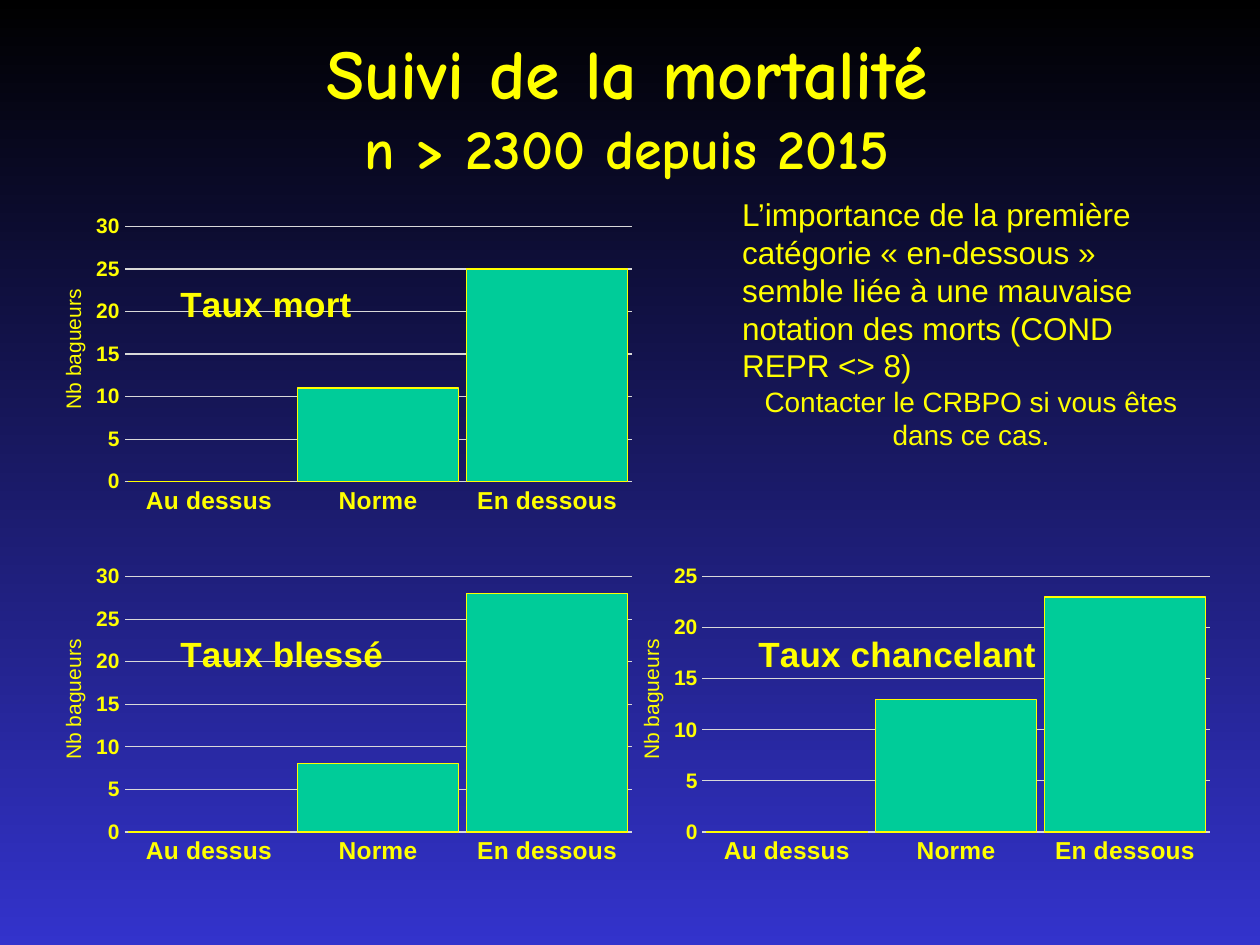
from pptx import Presentation
from pptx.chart.data import CategoryChartData
from pptx.dml.color import RGBColor
from pptx.enum import chart as charts, text
from pptx.oxml import parse_xml
from pptx.oxml.ns import nsdecls, qn
from pptx.util import Cm, Pt

YELLOW = RGBColor(0xFF, 0xFF, 0x00)
GREEN = RGBColor(0x00, 0xCC, 0x99)
GREY = RGBColor(0xD9, 0xD9, 0xD9)
BLACK = RGBColor(0x00, 0x00, 0x00)
BLUE = RGBColor(0x33, 0x33, 0xCC)

CATEGORIES = ("Au dessus", "Norme", "En dessous")
LEFT, RIGHT = 0.64, 12.29
UPPER, LOWER = 4.17, 11.23
RATES = (
    ("Taux mort", (0, 11, 25), 30, LEFT, UPPER),
    ("Taux blessé", (0, 8, 28), 30, LEFT, LOWER),
    ("Taux chancelant", (0, 13, 23), 25, RIGHT, LOWER),
)


def set_font(font, size, bold=False, name="Arial"):
    font.name = name
    font.size = Pt(size)
    font.bold = bold
    font.color.rgb = YELLOW


def paint_background(page):
    fill = page.background.fill
    fill.gradient()
    fill.gradient_angle = 270
    for stop, color, position in zip(fill.gradient_stops, (BLACK, BLUE), (0, 1)):
        stop.color.rgb = color
        stop.position = position


def add_shadow(span):
    span._r.get_or_add_rPr().find(qn("a:solidFill")).addnext(parse_xml(
        f'<a:effectLst {nsdecls("a")}><a:outerShdw dist="35921" dir="2700000">'
        '<a:srgbClr val="000000"/></a:outerShdw></a:effectLst>'))


def add_span(para, content, shadow=False, **font):
    span = para.add_run()
    span.text = content
    set_font(span.font, **font)
    if shadow:
        add_shadow(span)


def add_box(page, left, top, width, height, anchor):
    box = page.shapes.add_textbox(Cm(left), Cm(top), Cm(width), Cm(height))
    box.text_frame.word_wrap = True
    box.text_frame.vertical_anchor = anchor
    return box.text_frame


def add_heading(page):
    frame = add_box(page, 1.85, 0.53, 21.59, 3.18, text.MSO_ANCHOR.MIDDLE)
    para = frame.paragraphs[0]
    para.alignment = text.PP_ALIGN.CENTER
    style = dict(bold=True, name="Comic Neue", shadow=True)
    add_span(para, "Suivi de la mortalité", size=40, **style)
    para.add_line_break()
    add_span(para, "n > 2300 depuis 2015", size=32, **style)


def add_comment(page):
    frame = add_box(page, 14.71, 3.81, 9.73, 5.46, text.MSO_ANCHOR.TOP)
    add_span(frame.paragraphs[0],
             "L’importance de la première catégorie «\u00a0en-dessous\u00a0» semble liée "
             "à une mauvaise notation des morts (COND REPR <> 8)", size=18)
    para = frame.add_paragraph()
    para.alignment = text.PP_ALIGN.CENTER
    add_span(para, "Contacter le CRBPO si vous êtes dans ce cas.", size=16)


def place(element, index, inner=False, **fractions):
    """Fix a chart part at fractions (x, y, w, h) of the chart's size."""
    old = element.find(qn("c:layout"))
    if old is not None:
        element.remove(old)
    target = '<c:layoutTarget val="inner"/>' if inner else ""
    modes = "".join(f'<c:{key}Mode val="edge"/>' for key in "xy")
    values = "".join(f'<c:{key} val="{value}"/>' for key, value in fractions.items())
    element.insert(index, parse_xml(
        f'<c:layout {nsdecls("c")}><c:manualLayout>{target}{modes}{values}'
        '</c:manualLayout></c:layout>'))


def set_title(title, content, x, y, **font):
    add_span(title.text_frame.paragraphs[0], content, **font)
    place(title._element, 1, x=x, y=y)


def set_line(line, color):
    line.color.rgb = color
    line.width = Pt(0.75)


def style_axis(axis, size):
    axis.major_tick_mark = axis.minor_tick_mark = charts.XL_TICK_MARK.NONE
    set_font(axis.tick_labels.font, size, bold=True)


def add_rate_chart(page, name, values, maximum, left, top):
    data = CategoryChartData(number_format="0")
    data.categories = CATEGORIES
    data.add_series("Series 1", values)
    chart = page.shapes.add_chart(
        charts.XL_CHART_TYPE.COLUMN_CLUSTERED,
        Cm(left), Cm(top), Cm(12.47), Cm(6.6), data).chart
    chart.font.name = "Arial"
    chart.font.size = Pt(10)
    chart.has_legend = False
    chart.has_title = True
    set_title(chart.chart_title, name, 0.23, 0.21, size=20, bold=True)
    chart.chart_title.include_in_layout = False
    place(chart._chartSpace.chart.plotArea, 0, inner=True,
          x=0.15, y=0.06, w=0.82, h=0.78)

    style_axis(chart.category_axis, 14)
    set_line(chart.category_axis.format.line, GREY)
    axis = chart.value_axis
    style_axis(axis, 12)
    axis.format.line.fill.background()
    axis.minimum_scale, axis.maximum_scale, axis.major_unit = 0, maximum, 5
    set_line(axis.major_gridlines.format.line, GREY)
    set_title(axis.axis_title, "Nb bagueurs", 0.04, 0.24, size=12)

    plot = chart.plots[0]
    plot.gap_width = 5
    plot.vary_by_categories = False
    bars = plot.series[0].format
    bars.fill.solid()
    bars.fill.fore_color.rgb = GREEN
    set_line(bars.line, YELLOW)


def main():
    deck = Presentation()
    deck.slide_width, deck.slide_height = Cm(25.4), Cm(19.05)
    page = deck.slides.add_slide(deck.slide_layouts[6])
    paint_background(page)
    add_heading(page)
    add_comment(page)
    for rate in RATES:
        add_rate_chart(page, *rate)
    deck.save("out.pptx")


if __name__ == "__main__":
    main()
